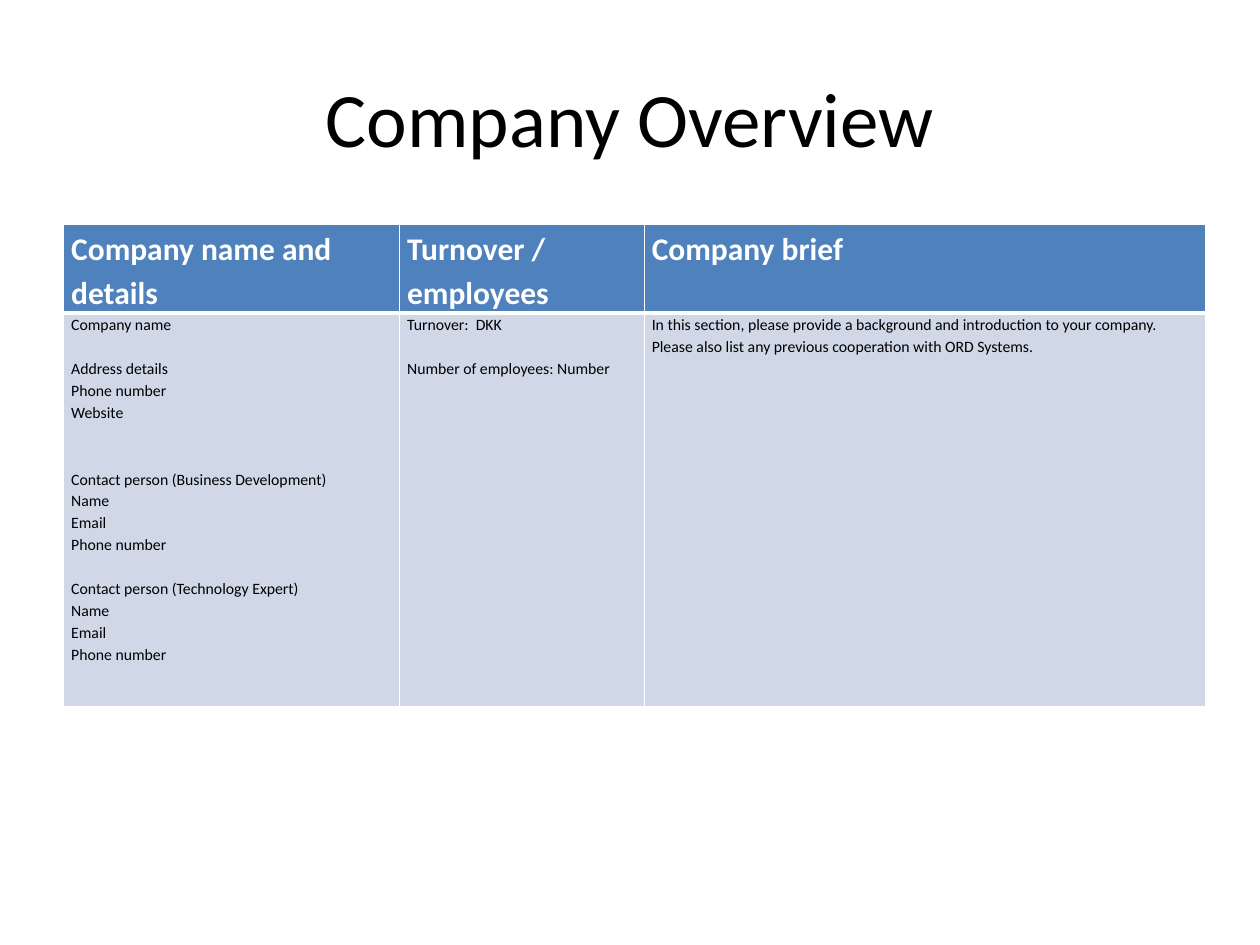
from lxml.etree import SubElement
from pptx import Presentation
from pptx.dml.color import RGBColor
from pptx.enum.text import MSO_ANCHOR, PP_ALIGN
from pptx.oxml.ns import qn
from pptx.util import Pt

BLACK, WHITE, BLUE, PALE_BLUE = "000000", "FFFFFF", "4F81BD", "D0D8E8"
BODY_LINE = 12.6  # height of one 9 pt line at 1.15 spacing

HEADINGS = ["Company name and details", "Turnover / employees", "Company brief"]
# Each cell is a list of groups; each group is (blank lines above, lines)
DETAILS = [
    [
        (0, ["Company name"]),
        (1, ["Address details", "Phone number", "Website"]),
        (2, ["Contact person (Business Development)", "Name", "Email", "Phone number"]),
        (1, ["Contact person (Technology Expert)", "Name", "Email", "Phone number"]),
    ],
    [(0, ["Turnover:  DKK"]), (1, ["Number of employees: Number"])],
    [(0, ["In this section, please provide a background and introduction to your "
          "company.  Please also list any previous cooperation with ORD Systems."])],
]


def color(value):
    return RGBColor.from_string(value)


class SlideBuilder:
    font_name = "Calibri"

    def __init__(self, page):
        self.page = page

    def format_para(self, para, size, ink, bold=False):
        para.font.name = self.font_name
        para.font.size = Pt(size)
        para.font.bold = bold
        para.font.color.rgb = color(ink)

    def title(self, text, left, top, width, height):
        box = self.page.shapes.title
        box.left, box.top, box.width, box.height = map(Pt, (left, top, width, height))
        frame = box.text_frame
        frame.text = text
        frame.vertical_anchor = MSO_ANCHOR.MIDDLE
        para = frame.paragraphs[0]
        para.alignment = PP_ALIGN.CENTER
        self.format_para(para, 44, BLACK)

    def borders(self, cell, top=1, bottom=1):
        properties = cell._tc.get_or_add_tcPr()
        for side, width in (("L", 1), ("R", 1), ("T", top), ("B", bottom)):
            line = SubElement(properties, qn(f"a:ln{side}"), w=str(Pt(width)))
            fill = SubElement(line, qn("a:solidFill"))
            SubElement(fill, qn("a:srgbClr"), val=WHITE)

    def cell(self, cell, groups, size, ink, fill, bold=False, **edges):
        self.borders(cell, **edges)
        cell.fill.solid()
        cell.fill.fore_color.rgb = color(fill)
        cell.margin_left = cell.margin_right = Pt(4.3)
        cell.margin_top = cell.margin_bottom = 0
        frame = cell.text_frame
        para = None
        for blank_lines, lines in groups:
            for number, text in enumerate(lines):
                para = frame.add_paragraph() if para else frame.paragraphs[0]
                para.text = text
                para.line_spacing = 1.15
                if number == 0 and blank_lines:
                    para.space_before = Pt(blank_lines * BODY_LINE)
                self.format_para(para, size, ink, bold)

    def table(self, left, top, widths, heights):
        frame = self.page.shapes.add_table(
            len(heights), len(widths), Pt(left), Pt(top), Pt(sum(widths)), Pt(sum(heights)))
        table = frame.table
        for column, width in zip(table.columns, widths):
            column.width = Pt(width)
        for row, height in zip(table.rows, heights):
            row.height = Pt(height)
        return table


def main():
    deck = Presentation()
    deck.slide_width, deck.slide_height = Pt(720), Pt(540)
    page = deck.slides.add_slide(deck.slide_layouts[5])
    builder = SlideBuilder(page)

    # Title
    builder.title("Company Overview", 36, 21.6, 648, 90)

    # Company table: heading row above one row of details
    table = builder.table(36.4, 128.4, widths=[192, 139.8, 321], heights=[50.4, 225])
    for index, (heading, groups) in enumerate(zip(HEADINGS, DETAILS)):
        builder.cell(table.cell(0, index), [(0, [heading])], 18, WHITE, BLUE,
                     bold=True, bottom=3)
        builder.cell(table.cell(1, index), groups, 9, BLACK, PALE_BLUE, top=3)

    deck.save("out.pptx")


if __name__ == "__main__":
    main()
